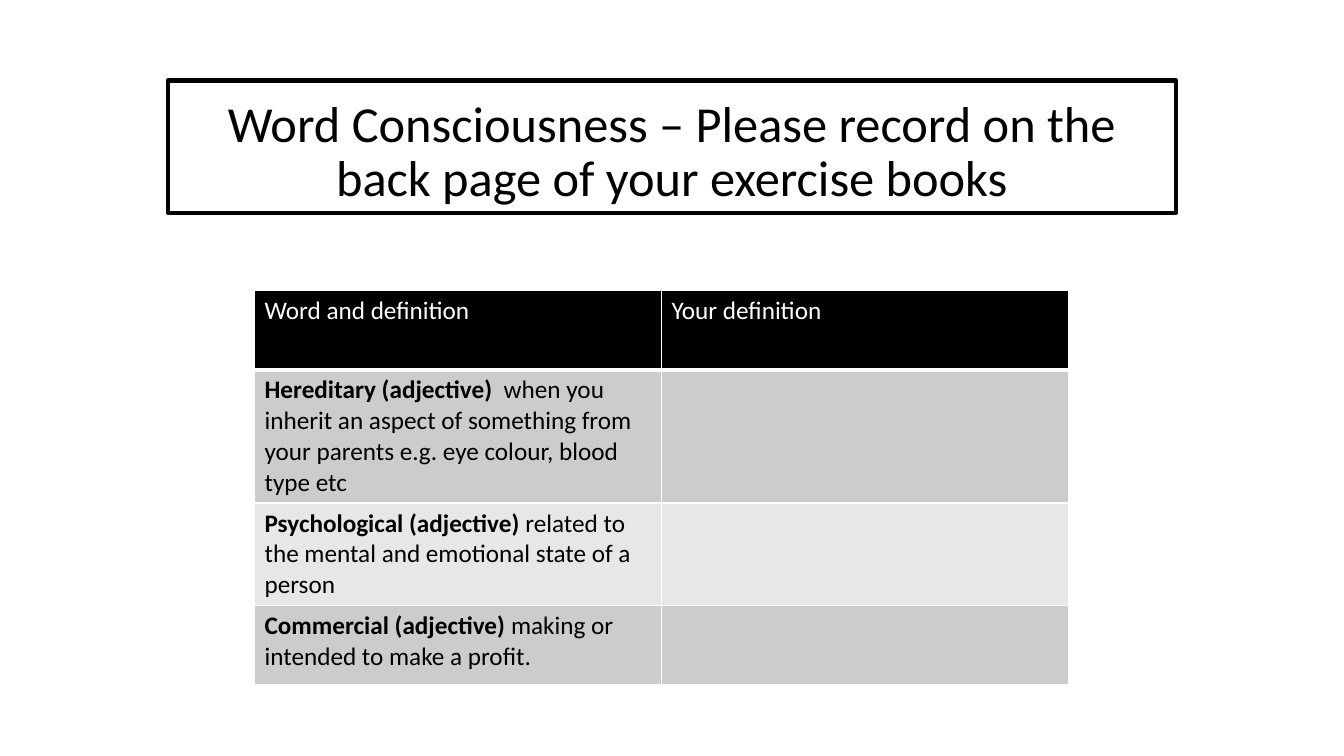
from lxml import etree
from pptx import Presentation
from pptx.dml.color import RGBColor
from pptx.enum.shapes import MSO_SHAPE
from pptx.enum.text import MSO_ANCHOR, PP_ALIGN
from pptx.oxml.ns import qn
from pptx.util import Pt

RECT = MSO_SHAPE.RECTANGLE
BOTTOM = MSO_ANCHOR.BOTTOM
CENTER = PP_ALIGN.CENTER

COLORS = {"black": "000000", "white": "FFFFFF", "dark": "CCCCCC", "light": "E7E7E7"}

TITLE = "Word Consciousness – Please record on the back page of your exercise books"
HEADINGS = ["Word and definition", "Your definition"]
WORDS = [
    ("Hereditary (adjective) ",
     " when you inherit an aspect of something from your parents e.g. eye colour, blood type etc"),
    ("Psychological (adjective) ",
     "related to the mental and emotional state of a person"),
    ("Commercial (adjective) ", "making or intended to make a profit."),
]


def rgb(name):
    return RGBColor.from_string(COLORS[name])


def add_run(p, text, color, **formats):
    r = p.add_run()
    r.text = text
    r.font.color.rgb = rgb(color)
    for key, value in {"name": "Calibri", "bold": False, **formats}.items():
        setattr(r.font, key, value)


def add_title(s, text, left, top, width, height):
    sp = s.shapes.add_shape(RECT, Pt(left), Pt(top), Pt(width), Pt(height))
    sp.shadow.inherit = False
    sp.fill.solid()
    sp.fill.fore_color.rgb = rgb("white")
    white = sp.fill._xPr.find(".//" + qn("a:srgbClr"))
    etree.SubElement(white, qn("a:alpha"), val="64000")
    sp.line.color.rgb = rgb("black")
    sp.line.width = Pt(3)
    etree.SubElement(sp.line._ln, qn("a:round"))
    tf = sp.text_frame
    tf.word_wrap = True
    tf.vertical_anchor = BOTTOM
    p = tf.paragraphs[0]
    p.alignment = CENTER
    p.line_spacing = 0.9
    add_run(p, text, "black", size=Pt(36))


def format_cell(cell, fill, top, bottom):
    # Borders come before the fill in the cell properties
    tcPr = cell._tc.get_or_add_tcPr()
    for side, width in {"L": 1, "R": 1, "T": top, "B": bottom}.items():
        ln = etree.SubElement(tcPr, qn("a:ln" + side), w=str(Pt(width)))
        solid = etree.SubElement(ln, qn("a:solidFill"))
        etree.SubElement(solid, qn("a:srgbClr"), val=COLORS["white"])
    cell.fill.solid()
    cell.fill.fore_color.rgb = rgb(fill)


def add_word_table(s, left, top, col_width, row_height):
    rows, cols = len(WORDS) + 1, len(HEADINGS)
    table = s.shapes.add_table(rows, cols, Pt(left), Pt(top), Pt(col_width * cols),
                               Pt(row_height * rows)).table
    for row in table.rows:
        row.height = Pt(row_height)

    # Header row
    for c, heading in enumerate(HEADINGS):
        cell = table.cell(0, c)
        format_cell(cell, "black", 1, 3)
        add_run(cell.text_frame.paragraphs[0], heading, "white", size=Pt(18))

    # Word rows, with an empty cell for the pupil's definition
    for i, (word, meaning) in enumerate(WORDS, 1):
        for c in range(cols):
            format_cell(table.cell(i, c), "dark" if i % 2 else "light", 3 if i == 1 else 1, 1)
        p = table.cell(i, 0).text_frame.paragraphs[0]
        add_run(p, word, "black", size=Pt(18), bold=True)
        add_run(p, meaning, "black", size=Pt(18))


def main():
    prs = Presentation()
    prs.slide_width, prs.slide_height = Pt(960), Pt(540)
    s = prs.slides.add_slide(prs.slide_layouts[6])
    add_title(s, TITLE, 120, 57.5, 720, 94.5)
    add_word_table(s, 181.8, 207.6, 290.7, 56.6)
    prs.save("out.pptx")


if __name__ == "__main__":
    main()
